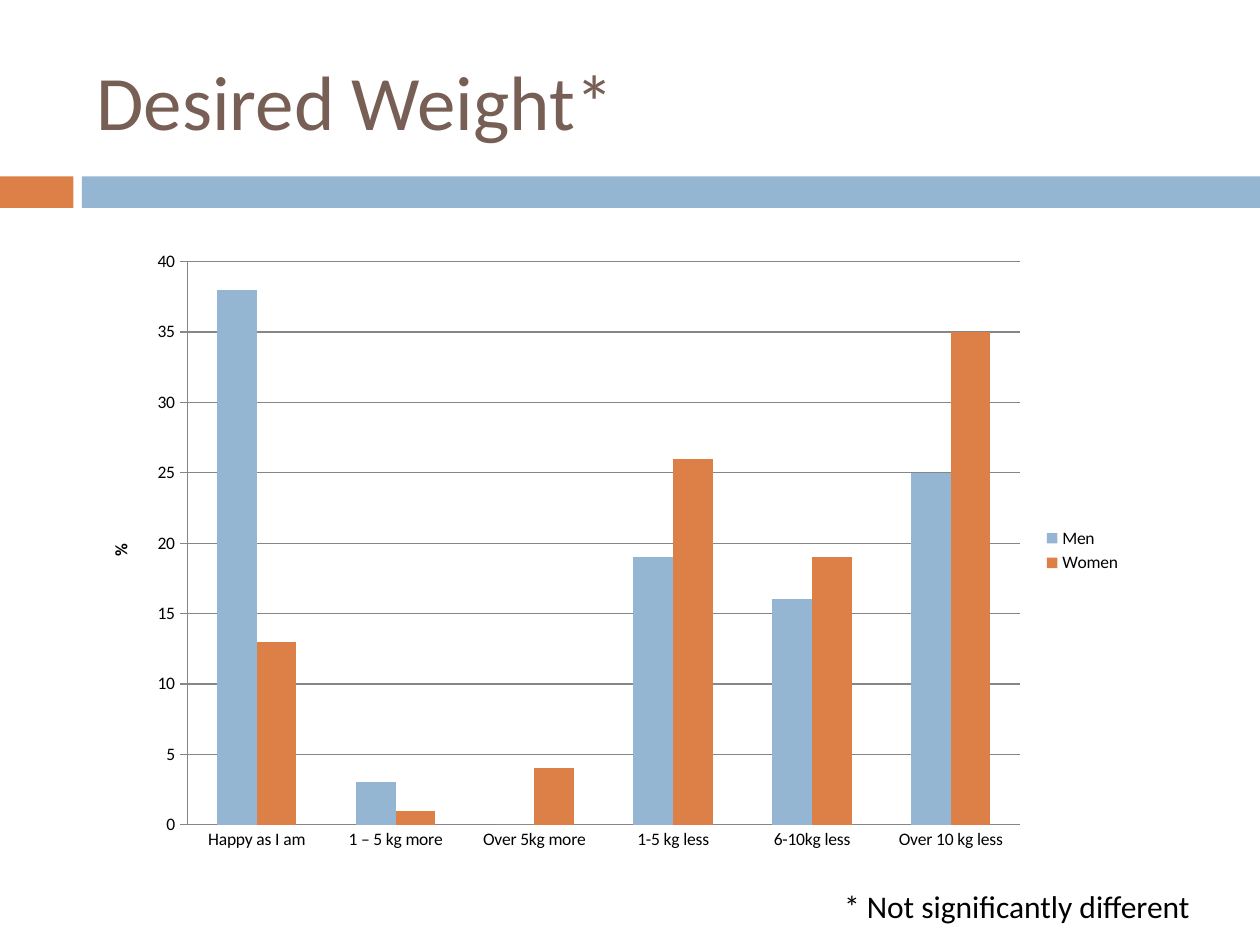
from dataclasses import dataclass

from pptx import Presentation
from pptx.chart.data import CategoryChartData
from pptx.dml.color import RGBColor
from pptx.enum.chart import XL_CHART_TYPE, XL_LEGEND_POSITION, XL_TICK_MARK
from pptx.enum.shapes import MSO_SHAPE
from pptx.enum.text import MSO_ANCHOR, MSO_AUTO_SIZE, PP_ALIGN
from pptx.util import Pt


@dataclass(frozen=True)
class Theme:
    font: str = "Calibri"
    blue: RGBColor = RGBColor(0x94, 0xB6, 0xD2)
    orange: RGBColor = RGBColor(0xDD, 0x80, 0x47)
    brown: RGBColor = RGBColor(0x77, 0x5F, 0x55)
    black: RGBColor = RGBColor(0, 0, 0)
    grid: RGBColor = RGBColor(0x86, 0x86, 0x86)
    title_size: int = 44
    note_size: int = 18
    chart_size: int = 10


class SlideBuilder:
    def __init__(self, slide, theme):
        self.slide = slide
        self.theme = theme

    def style(self, font, size, color):
        font.name, font.size = self.theme.font, Pt(size)
        font.color.rgb = color

    def bar(self, x, y, w, h, color):
        sp = self.slide.shapes.add_shape(
            MSO_SHAPE.RECTANGLE, Pt(x), Pt(y), Pt(w), Pt(h))
        sp.shadow.inherit = False
        sp.fill.solid()
        sp.fill.fore_color.rgb = color
        sp.line.fill.background()

    def title(self, text, x, y, w, h):
        sp = self.slide.shapes.title
        sp.left, sp.top, sp.width, sp.height = Pt(x), Pt(y), Pt(w), Pt(h)
        tf = sp.text_frame
        tf.text = text
        tf.vertical_anchor = MSO_ANCHOR.MIDDLE
        p = tf.paragraphs[0]
        p.alignment = PP_ALIGN.LEFT
        self.style(p.font, self.theme.title_size, self.theme.brown)

    def note(self, text, x, y, w, h):
        tf = self.slide.shapes.add_textbox(Pt(x), Pt(y), Pt(w), Pt(h)).text_frame
        tf.word_wrap = False
        tf.auto_size = MSO_AUTO_SIZE.SHAPE_TO_FIT_TEXT
        tf.text = text
        self.style(tf.paragraphs[0].font, self.theme.note_size, self.theme.black)

    def column_chart(self, categories, series, axis_title, x, y, w, h):
        theme = self.theme
        data = CategoryChartData()
        data.categories = categories
        for name, values, _ in series:
            data.add_series(name, values)
        chart = self.slide.shapes.add_chart(
            XL_CHART_TYPE.COLUMN_CLUSTERED, Pt(x), Pt(y), Pt(w), Pt(h), data).chart
        self.style(chart.font, theme.chart_size, theme.black)
        chart.has_title = False

        # Legend
        chart.has_legend = True
        chart.legend.position = XL_LEGEND_POSITION.RIGHT
        chart.legend.include_in_layout = False

        # Columns
        plot = chart.plots[0]
        plot.gap_width = 150
        plot.vary_by_categories = False
        for column, (_, _, color) in zip(plot.series, series):
            column.format.fill.solid()
            column.format.fill.fore_color.rgb = color

        # Axes
        cat, val = chart.category_axis, chart.value_axis
        cat.major_tick_mark = XL_TICK_MARK.NONE
        val.major_tick_mark = XL_TICK_MARK.OUTSIDE
        val.minimum_scale, val.maximum_scale, val.major_unit = 0, 40, 5
        val.has_major_gridlines = True
        for part in (cat, val, val.major_gridlines):
            part.format.line.color.rgb = theme.grid
            part.format.line.width = Pt(0.75)
        tf = val.axis_title.text_frame
        tf.text = axis_title
        p = tf.paragraphs[0]
        p.font.bold = True
        self.style(p.font, theme.chart_size, theme.black)


def main():
    prs = Presentation()
    prs.slide_width, prs.slide_height = Pt(720), Pt(540)
    theme = Theme()
    s = SlideBuilder(prs.slides.add_slide(prs.slide_layouts[5]), theme)

    # Heading and divider band
    s.bar(0, 100.8, 42, 18, theme.orange)
    s.bar(46.8, 100.8, 673.2, 18, theme.blue)
    s.title("Desired Weight*", 48, 18, 642, 78)

    # Weight preferences by sex
    s.column_chart(
        ["Happy as I am", "1 – 5 kg more", "Over 5kg more",
         "1-5 kg less", "6-10kg less", "Over 10 kg less"],
        [("Men", (38, 3, 0, 19, 16, 25), theme.blue),
         ("Women", (13, 1, 4, 26, 19, 35), theme.orange)],
        "%", 48, 136.8, 600, 355.7)

    # Footnote
    s.note("* Not significantly different", 475.2, 503.3, 212.4, 29)

    prs.save("out.pptx")


if __name__ == "__main__":
    main()
